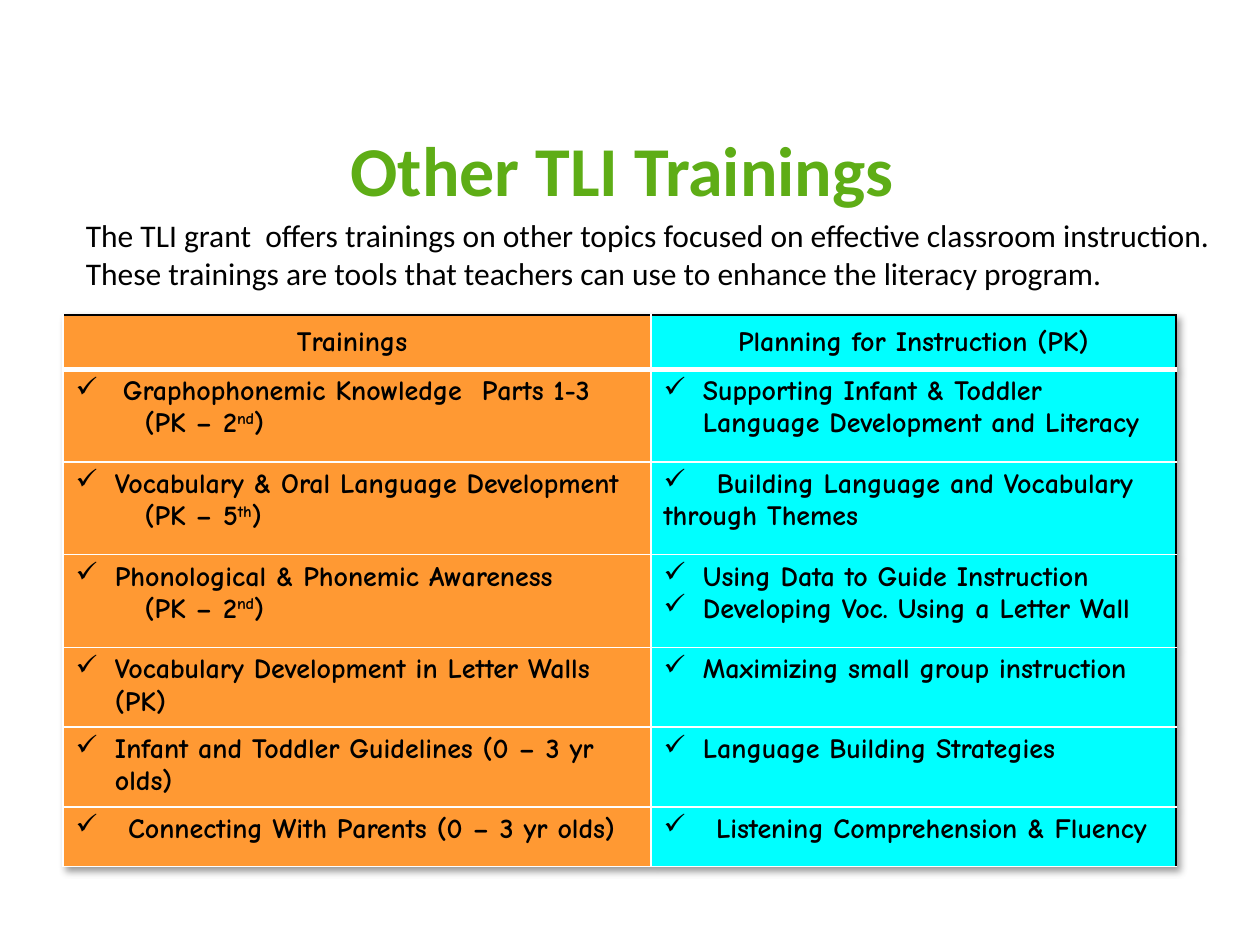
from lxml import etree
from pptx import Presentation
from pptx.dml.color import RGBColor
from pptx.enum.text import MSO_ANCHOR, PP_ALIGN
from pptx.oxml.ns import qn
from pptx.util import Pt

LEFT, CENTER = PP_ALIGN.LEFT, PP_ALIGN.CENTER
TOP, MIDDLE = MSO_ANCHOR.TOP, MSO_ANCHOR.MIDDLE
GREEN = RGBColor(0x5E, 0xAD, 0x16)
ORANGE = RGBColor(0xFF, 0x99, 0x33)
CYAN = RGBColor(0x00, 0xFF, 0xFF)
BLACK = RGBColor(0x00, 0x00, 0x00)
WHITE = RGBColor(0xFF, 0xFF, 0xFF)


def write(paragraph, text, font="Comic Neue", size=16, color=BLACK, bold=True,
          align=LEFT, margin=0, hanging=0, tab=0, bullet=False):
    paragraph.alignment = align
    properties = paragraph._p.get_or_add_pPr()
    properties.set("marL", str(Pt(margin)))
    properties.set("indent", str(Pt(-hanging)))
    if bullet:
        etree.SubElement(properties, qn("a:buChar"), char="✓")
    else:
        etree.SubElement(properties, qn("a:buNone"))
    if tab:
        tabs = etree.SubElement(properties, qn("a:tabLst"))
        etree.SubElement(tabs, qn("a:tab"), pos=str(Pt(tab)), algn="l")
    for index, part in enumerate(text.split("^")):
        run = paragraph.add_run()
        run.text = part
        run.font.name = font
        run.font.size = Pt(size)
        run.font.bold = bold
        run.font.color.rgb = color
        if index % 2:
            run._r.get_or_add_rPr().set("baseline", "30000")


def add_border(cell, side, color, width):
    line = etree.SubElement(cell._tc.get_or_add_tcPr(), qn(f"a:ln{side}"), w=str(Pt(width)))
    fill = etree.SubElement(line, qn("a:solidFill"))
    etree.SubElement(fill, qn("a:srgbClr"), val=str(color))


presentation = Presentation()
presentation.slide_width = Pt(720)
presentation.slide_height = Pt(540)
slide = presentation.slides.add_slide(presentation.slide_layouts[5])

title = slide.shapes.title
title.left, title.top, title.width, title.height = Pt(36), Pt(66), Pt(648), Pt(60.5)
title.text_frame.vertical_anchor = MIDDLE
write(title.text_frame.paragraphs[0], "Other TLI Trainings ", font="Calibri",
      size=40, color=GREEN, align=CENTER)

introduction = slide.shapes.add_textbox(Pt(24), Pt(120), Pt(690), Pt(54))
introduction.text_frame.word_wrap = True
write(introduction.text_frame.paragraphs[0],
      "The TLI grant  offers trainings on other topics focused on effective classroom "
      "instruction. These trainings are tools that teachers can use to enhance the literacy program.",
      font="Calibri", size=18, bold=False, margin=18)

HEADING = {"align": CENTER}
CHECK = {"bullet": True, "margin": 22.5, "hanging": 22.5}
WIDE_CHECK = {"bullet": True, "margin": 30, "hanging": 30}
FIRST_CHECK = {"bullet": True, "margin": 27, "hanging": 27}
TAB_CHECK = {"bullet": True, "tab": 30.5}
GRADES = {"margin": 39.5}

rows = [
    (31, [("Trainings ", HEADING)],
     [("Planning for Instruction (PK)", HEADING)]),
    (53, [("Graphophonemic Knowledge  Parts 1-3", FIRST_CHECK), ("(PK – 2^nd^)", GRADES)],
     [("Supporting Infant & Toddler Language Development and Literacy", CHECK)]),
    (53, [("Vocabulary & Oral Language Development", CHECK), ("(PK – 5^th^)", GRADES)],
     [("\tBuilding Language and Vocabulary through Themes", TAB_CHECK)]),
    (53, [("Phonological & Phonemic Awareness", CHECK), ("(PK – 2^nd^)", GRADES)],
     [("Using Data to Guide Instruction", CHECK),
      ("Developing Voc. Using a Letter Wall", CHECK)]),
    (34, [("Vocabulary Development in Letter Walls (PK)", CHECK)],
     [("Maximizing small group instruction", CHECK)]),
    (34, [("Infant and Toddler Guidelines (0 – 3 yr olds)", CHECK)],
     [("Language Building Strategies", CHECK)]),
    (34, [("Connecting With Parents (0 – 3 yr olds)", WIDE_CHECK)],
     [("Listening Comprehension & Fluency", WIDE_CHECK)]),
]
columns = [(336, ORANGE, WHITE), (300, CYAN, BLACK)]

table_frame = slide.shapes.add_table(len(rows), len(columns), Pt(36), Pt(180), Pt(636), Pt(292))
table = table_frame.table
table.horz_banding = False
table_properties = table._tbl.tblPr
effects = etree.Element(qn("a:effectLst"))
table_properties.insert(0, effects)
shadow = etree.SubElement(effects, qn("a:outerShdw"), blurRad=str(Pt(4)), dist=str(Pt(3)),
                          dir="2700000", algn="tl", rotWithShape="0")
shadow_color = etree.SubElement(shadow, qn("a:srgbClr"), val=str(BLACK))
etree.SubElement(shadow_color, qn("a:alpha"), val="40000")

for column_index, (width, fill_color, right_color) in enumerate(columns):
    table.columns[column_index].width = Pt(width)
    for row_index, (height, *contents) in enumerate(rows):
        table.rows[row_index].height = Pt(height)
        cell = table.cell(row_index, column_index)
        is_heading = row_index == 0
        cell.vertical_anchor = MIDDLE if is_heading else TOP
        add_border(cell, "L", WHITE, 1)
        add_border(cell, "R", right_color, 1)
        add_border(cell, "T", BLACK if is_heading else WHITE, 3 if row_index == 1 else 1)
        add_border(cell, "B", WHITE, 3 if is_heading else 1)
        cell.fill.solid()
        cell.fill.fore_color.rgb = fill_color
        for index, (text, text_format) in enumerate(contents[column_index]):
            frame = cell.text_frame
            paragraph = frame.add_paragraph() if index else frame.paragraphs[0]
            write(paragraph, text, **text_format)

presentation.save("out.pptx")
